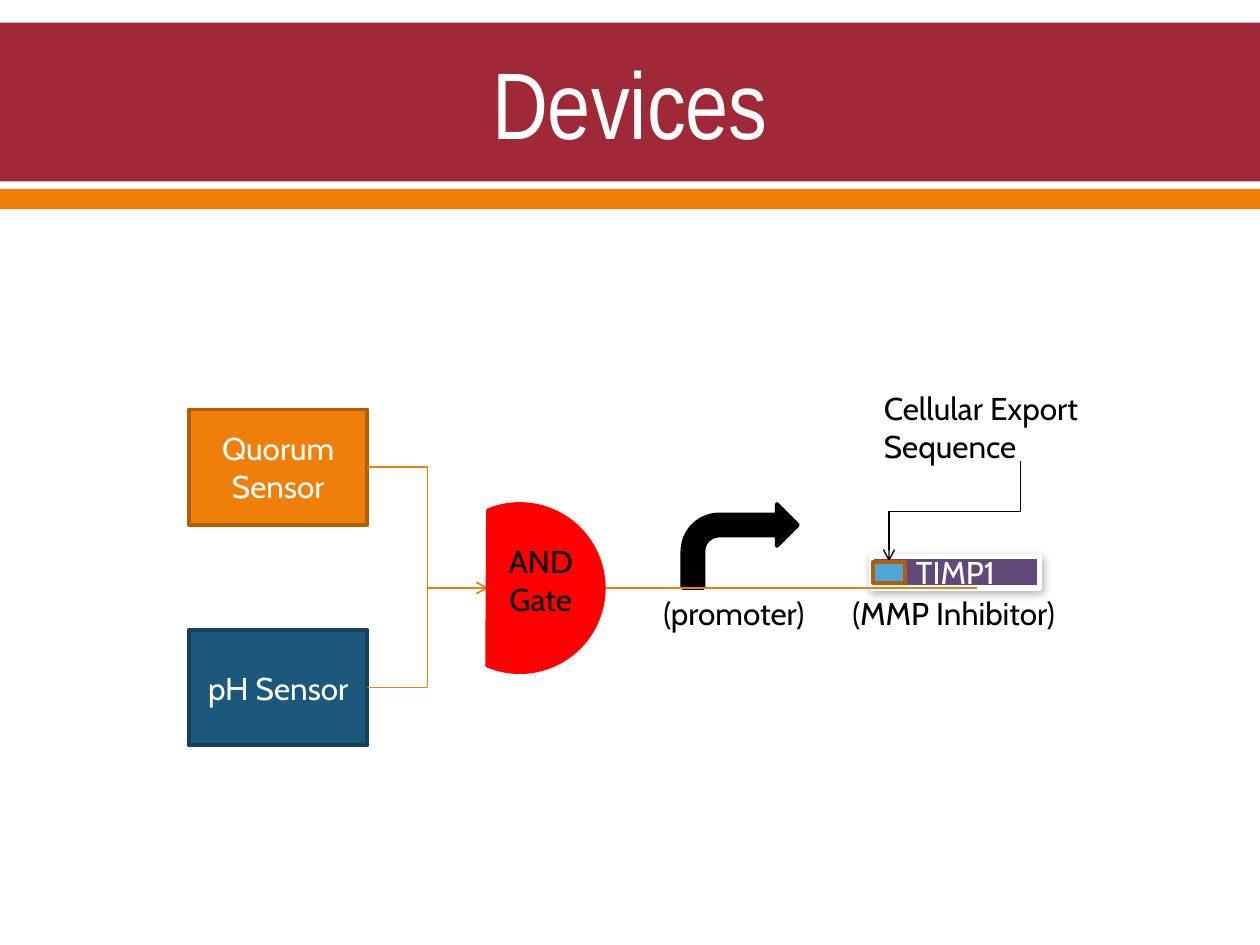
from lxml import etree
from pptx import Presentation
from pptx.dml.color import RGBColor
from pptx.enum.shapes import MSO_CONNECTOR, MSO_SHAPE
from pptx.enum.text import MSO_ANCHOR, PP_ALIGN
from pptx.oxml import parse_xml
from pptx.oxml.ns import qn
from pptx.util import Pt

RECTANGLE = MSO_SHAPE.RECTANGLE
STRAIGHT, ELBOW = MSO_CONNECTOR.STRAIGHT, MSO_CONNECTOR.ELBOW
LEFT, CENTER = PP_ALIGN.LEFT, PP_ALIGN.CENTER
MIDDLE, TOP = MSO_ANCHOR.MIDDLE, MSO_ANCHOR.TOP

WHITE = RGBColor(0xFF, 0xFF, 0xFF)
BLACK = RGBColor(0x00, 0x00, 0x00)
CRIMSON = RGBColor(0x9F, 0x29, 0x36)
ORANGE = RGBColor(0xF0, 0x7F, 0x09)
DARK_ORANGE = RGBColor(0xB2, 0x5E, 0x07)
BLUE = RGBColor(0x1B, 0x58, 0x7C)
DARK_BLUE = RGBColor(0x14, 0x41, 0x5C)
LIGHT_BLUE = RGBColor(0x4E, 0xA5, 0xD8)
PURPLE = RGBColor(0x60, 0x48, 0x78)
RED = RGBColor(0xFF, 0x00, 0x00)

SIGNAL_Y = 336
LINE_WIDTH = 0.79
OUTLINE_WIDTH = 2.22

presentation = Presentation()
presentation.slide_width = Pt(720)
presentation.slide_height = Pt(540)
slide = presentation.slides.add_slide(presentation.slide_layouts[6])
shapes = slide.shapes


def add_box(kind, box, fill=None, line=None, text="", color=WHITE, size=18,
            font="Cabin", align=CENTER, anchor=MIDDLE, line_width=OUTLINE_WIDTH):
    """Add a preset shape, or a text box when kind is None."""
    place = [Pt(length) for length in box]
    if kind is None:
        shape = shapes.add_textbox(*place)
    else:
        shape = shapes.add_shape(kind, *place)
        shape.shadow.inherit = False
        shape.fill.solid()
        shape.fill.fore_color.rgb = fill
        if line is None:
            shape.line.fill.background()
        else:
            shape.line.color.rgb = line
            shape.line.width = Pt(line_width)
    if text:
        frame = shape.text_frame
        frame.word_wrap = True
        frame.vertical_anchor = anchor
        frame.text = text
        for paragraph in frame.paragraphs:
            paragraph.alignment = align
            paragraph.font.name = font
            paragraph.font.size = Pt(size)
            paragraph.font.color.rgb = color
    return shape


def add_line(kind, points, color, arrow=False):
    connector = shapes.add_connector(kind, *[Pt(length) for length in points])
    connector.line.color.rgb = color
    connector.line.width = Pt(LINE_WIDTH)
    properties = connector._element.spPr
    if arrow:
        etree.SubElement(properties.find(qn("a:ln")), qn("a:tailEnd"), type="arrow")
    etree.SubElement(properties, qn("a:effectLst"))
    return connector


# Header
add_box(RECTANGLE, (0, 13, 720, 90.7), CRIMSON)
add_box(RECTANGLE, (0, 108, 720, 11.5), ORANGE)
add_box(None, (36, 14.4, 648, 88), text="Devices", size=54, font="Arial Narrow")

# Sensors, each wired to the gate
sensors = [
    ("Quorum Sensor", 234, ORANGE, DARK_ORANGE),
    ("pH Sensor", 360, BLUE, DARK_BLUE),
]
for name, top, fill, line in sensors:
    sensor = add_box(RECTANGLE, (108, top, 102, 66), fill, line, name)
    wire = add_line(ELBOW, (210, top + 33, 279, SIGNAL_Y), ORANGE, arrow=True)
    wire.begin_connect(sensor, 3)

# Gene and promoter
gene = add_box(RECTANGLE, (498, 318, 96, 18), PURPLE, WHITE, "TIMP1", line_width=3)
gene._element.spPr.find(qn("a:effectLst")).append(parse_xml(
    '<a:outerShdw xmlns:a="http://schemas.openxmlformats.org/drawingml/2006/main"'
    ' blurRad="63500" dist="25400" dir="3600000" algn="tl" rotWithShape="0">'
    '<a:srgbClr val="000000"><a:alpha val="30000"/></a:srgbClr></a:outerShdw>'))
add_box(MSO_SHAPE.BENT_ARROW, (390, 288, 66, 48), BLACK, BLACK)

# Gate output
for start, end in [(396, 558), (279, 396)]:
    add_line(STRAIGHT, (start, SIGNAL_Y, end, SIGNAL_Y), ORANGE)

# AND gate
gate = add_box(MSO_SHAPE.CHORD, (249, 288, 96, 96), RED, RED)
gate.rotation = 202.8
add_box(None, (282, 306, 54, 51), text="AND\nGate", color=BLACK, anchor=TOP)

# Export sequence: the pointer is turned so that it leaves and arrives vertically
pointer = add_line(ELBOW, (517, 254.7, 574, 329.7), BLACK, arrow=True)
pointer._element.spPr.find(qn("a:xfrm")).set("rot", str(90 * 60000))
add_box(RECTANGLE, (499, 321, 18, 12), LIGHT_BLUE, DARK_ORANGE)

# Labels
labels = [
    ("Cellular Export Sequence", (498, 219, 186, 51)),
    ("(promoter)", (372, SIGNAL_Y, 105, 29)),
    ("(MMP Inhibitor)", (480, SIGNAL_Y, 162, 29)),
]
for text, box in labels:
    add_box(None, box, text=text, color=BLACK, align=LEFT, anchor=TOP)

presentation.save("out.pptx")
